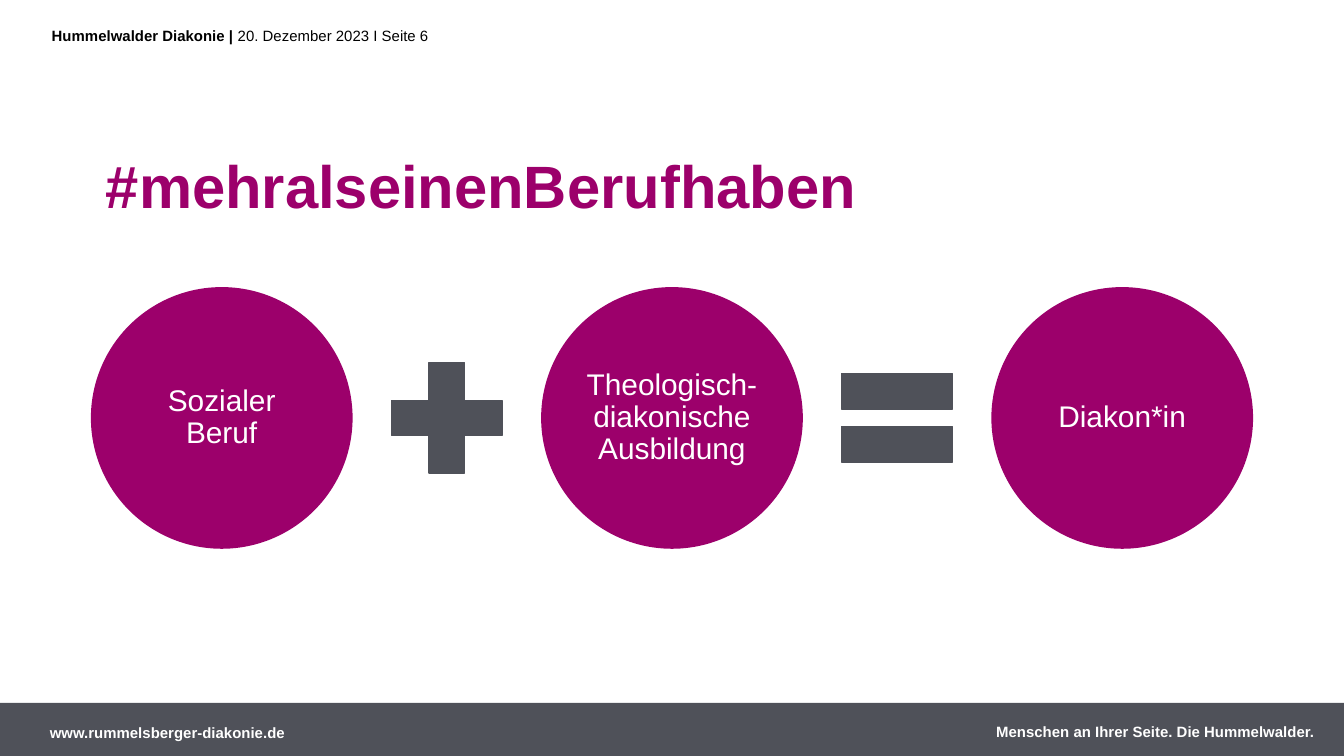
"""Build the slide that adds two trainings up to the diaconal profession."""
import pptx
import pptx.dml.color
import pptx.enum.shapes
import pptx.enum.text
import pptx.util

Pt = pptx.util.Pt
Shape = pptx.enum.shapes.MSO_SHAPE
Align = pptx.enum.text.PP_ALIGN
Anchor = pptx.enum.text.MSO_ANCHOR

BERRY, SLATE, WHITE, BLACK = "9C006B", "4F5159", "FFFFFF", "000000"
WIDTH, HEIGHT = 720, 405

TITLE = "#mehralseinenBerufhaben"
HEADER = [("Hummelwalder Diakonie | ", True), ("20. Dezember 2023 I Seite 6", False)]
WEBSITE = "www.rummelsberger-diakonie.de"
SLOGAN = "Menschen an Ihrer Seite. Die Hummelwalder."
TERMS = ["Sozialer Beruf", "Theologisch-diakonische Ausbildung", "Diakon*in"]
OPERATORS = [Shape.MATH_PLUS, Shape.MATH_EQUAL]

BAR_TOP = 376.6
CIRCLE, CIRCLE_LEFT, PITCH = 138.2, 49.7, 241.2
OPERATOR, MIDDLE = 80.6, 223.9


def color(value):
    return pptx.dml.color.RGBColor.from_string(value)


def write(frame, runs, size, ink, align=Align.LEFT):
    para = frame.paragraphs[0]
    para.alignment = align
    for text, bold in runs:
        span = para.add_run()
        span.text = text
        span.font.name = "Arial"
        span.font.size = Pt(size)
        span.font.bold = bold
        span.font.color.rgb = color(ink)
    return para


def add_text(page, area, runs, size, ink, align=Align.LEFT, anchor=Anchor.TOP):
    frame = page.shapes.add_textbox(*map(Pt, area)).text_frame
    frame.word_wrap = True
    frame.vertical_anchor = anchor
    write(frame, runs, size, ink, align)


def add_shape(page, kind, area, fill, line_width=0):
    shape = page.shapes.add_shape(kind, *map(Pt, area))
    shape.shadow.inherit = False
    shape.fill.solid()
    shape.fill.fore_color.rgb = color(fill)
    if line_width:
        shape.line.color.rgb = color(fill)
        shape.line.width = Pt(line_width)
    else:
        shape.line.fill.background()
    return shape


def add_term(page, index, term):
    left = CIRCLE_LEFT + index * PITCH
    area = (left, MIDDLE - CIRCLE / 2, CIRCLE, CIRCLE)
    frame = add_shape(page, Shape.OVAL, area, BERRY, 2).text_frame
    frame.word_wrap = True
    frame.vertical_anchor = Anchor.MIDDLE
    frame.margin_left = frame.margin_right = Pt(1.5)
    frame.margin_top = frame.margin_bottom = Pt(1.5)
    write(frame, [(term, False)], 16, WHITE, Align.CENTER).line_spacing = 0.9


def add_operator(page, index, kind):
    center = CIRCLE_LEFT + CIRCLE / 2 + (index + 0.5) * PITCH
    area = (center - OPERATOR / 2, MIDDLE - OPERATOR / 2, OPERATOR, OPERATOR)
    add_shape(page, kind, area, SLATE, 0.75)


def main():
    deck = pptx.Presentation()
    deck.slide_width, deck.slide_height = Pt(WIDTH), Pt(HEIGHT)
    page = deck.slides.add_slide(deck.slide_layouts[6])

    add_text(page, (20.6, 10.8, 383, 17.3), HEADER, 8, BLACK)
    add_shape(page, Shape.RECTANGLE, (0, BAR_TOP, WIDTH, HEIGHT - BAR_TOP), SLATE)
    add_text(page, (19.6, 384, 170, 17.3), [(WEBSITE, True)], 8, WHITE)
    add_text(page, (320.4, 383.7, 391, 17.3), [(SLOGAN, True)], 8, WHITE, Align.RIGHT)
    add_text(page, (49.7, 73.4, 621.4, 51.1), [(TITLE, True)], 32, BERRY,
             anchor=Anchor.MIDDLE)

    for index, term in enumerate(TERMS):
        add_term(page, index, term)
    for index, kind in enumerate(OPERATORS):
        add_operator(page, index, kind)

    deck.save("out.pptx")


if __name__ == "__main__":
    main()
